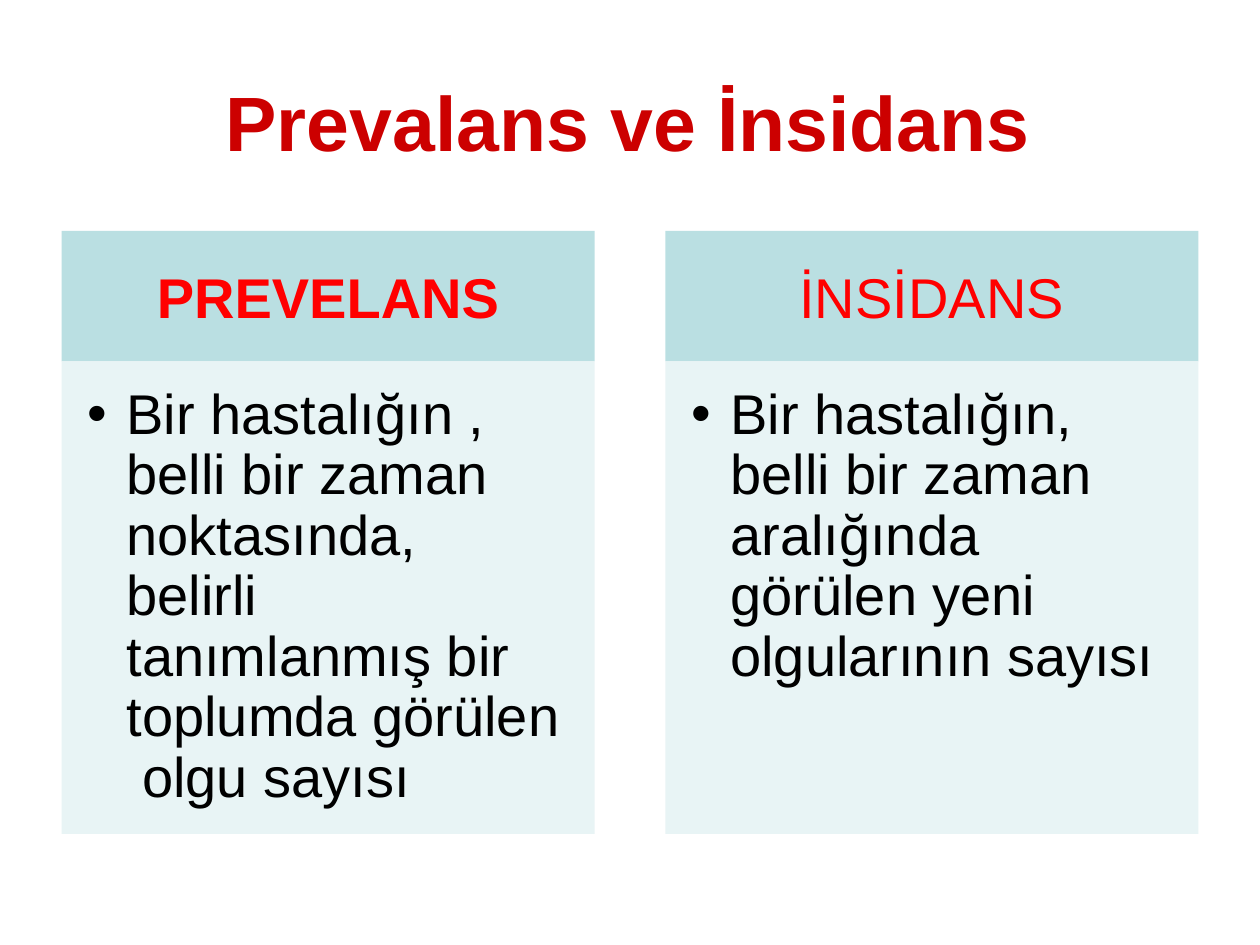
from lxml.etree import SubElement
from pptx import Presentation
from pptx.dml.color import RGBColor
from pptx.enum.shapes import MSO_SHAPE as Shape
from pptx.enum.text import MSO_ANCHOR as Anchor, PP_ALIGN as Align
from pptx.oxml.ns import qn
from pptx.util import Pt


def color(value):
    return RGBColor.from_string(value)


def write(box, text, size=32, ink="000000", bold=False, bullet=False):
    frame = box.text_frame
    frame.word_wrap = True
    frame.margin_left = frame.margin_right = frame.margin_bottom = 0
    frame.margin_top = Pt(14 if bullet else 0)
    frame.vertical_anchor = Anchor.TOP if bullet else Anchor.MIDDLE
    para = frame.paragraphs[0]
    para.text = text
    para.alignment = Align.LEFT if bullet else Align.CENTER
    if bullet:
        para.line_spacing = 0.9
        props = para._p.get_or_add_pPr()
        props.set("marL", str(Pt(37.2)))
        props.set("indent", str(Pt(-22.5)))
        SubElement(props, qn("a:buFont"), typeface="Arial")
        SubElement(props, qn("a:buChar"), char="•")
    for span in para.runs:
        span.font.name = "Arial"
        span.font.size = Pt(size)
        span.font.bold = bold
        span.font.color.rgb = color(ink)


deck = Presentation()
deck.slide_width, deck.slide_height = Pt(720), Pt(540)
page = deck.slides.add_slide(deck.slide_layouts[6])

title = page.shapes.add_textbox(Pt(119), Pt(43), Pt(480), Pt(52))
write(title, "Prevalans ve İnsidans", size=44, ink="CC0000", bold=True)

columns = [
    ("PREVELANS", True,
     "Bir hastalığın ,\vbelli bir zaman\vnoktasında,\vbelirli\v"
     "tanımlanmış bir\vtoplumda görülen\v olgu sayısı"),
    ("İNSİDANS", False,
     "Bir hastalığın,\vbelli bir zaman\varalığında\vgörülen yeni\v"
     "olgularının sayısı"),
]
header_top, header_height, body_height = 132, 74.5, 270
for index, (heading, bold, definition) in enumerate(columns):
    left = 35.2 + index * 345
    parts = [
        (header_top, header_height, "BADFE2", heading,
         dict(ink="FF0000", bold=bold)),
        (header_top + header_height, body_height, "E8F4F5", definition,
         dict(bullet=True)),
    ]
    for top, height, fill, text, style in parts:
        box = page.shapes.add_shape(Shape.RECTANGLE, Pt(left), Pt(top), Pt(304.6), Pt(height))
        box.shadow.inherit = False
        box.fill.solid()
        box.fill.fore_color.rgb = color(fill)
        box.line.fill.background()
        write(box, text, **style)

deck.save("out.pptx")
